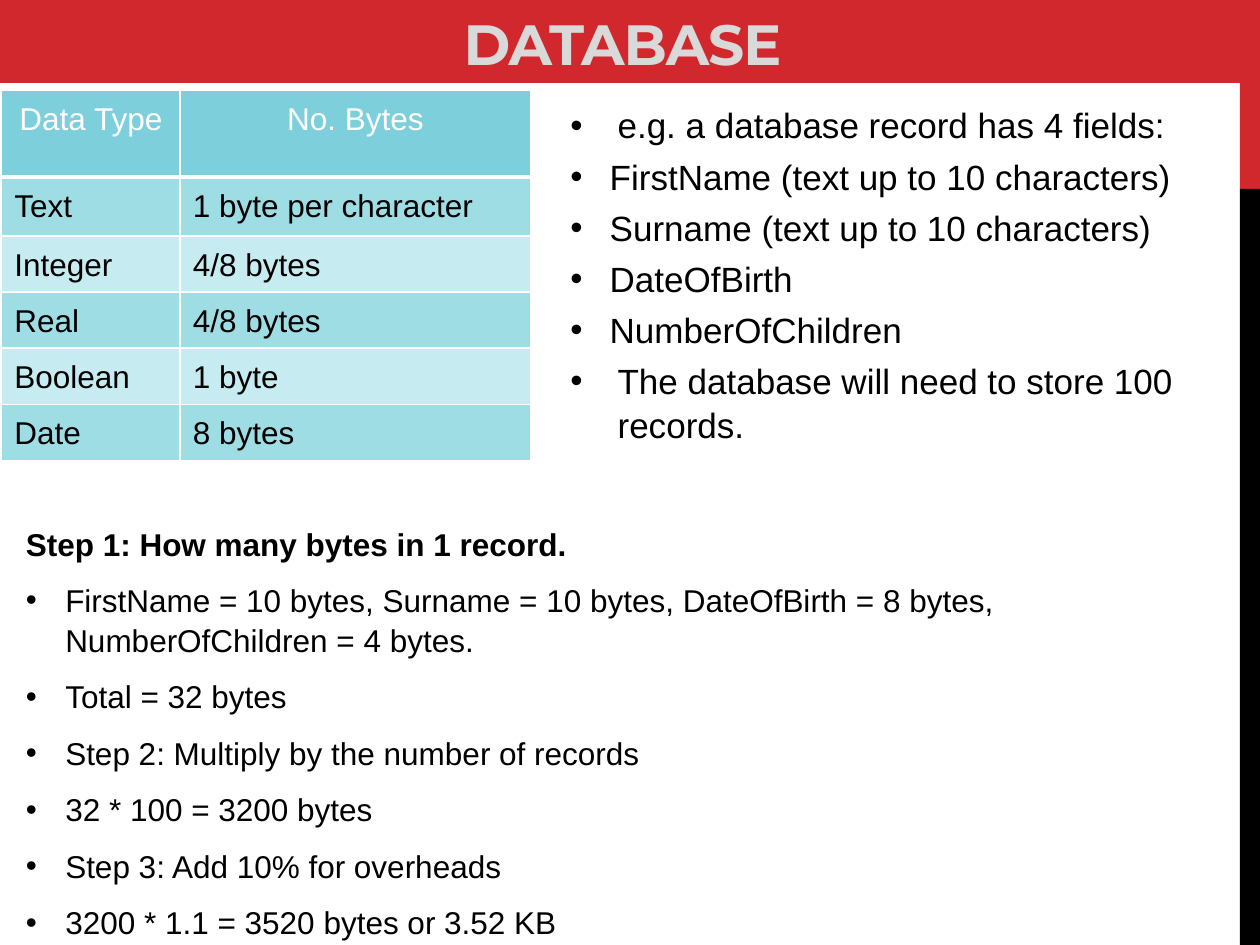
from pptx import Presentation
from pptx.dml.color import RGBColor
from pptx.enum.shapes import MSO_SHAPE
from pptx.enum.text import MSO_ANCHOR, PP_ALIGN
from pptx.oxml.ns import qn
from pptx.util import Pt
from lxml import etree

RECT = MSO_SHAPE.RECTANGLE
CENTER, LEFT = PP_ALIGN.CENTER, PP_ALIGN.LEFT
BOTTOM = MSO_ANCHOR.BOTTOM

RED = RGBColor(0xD1, 0x28, 0x2E)
BLACK = RGBColor(0x00, 0x00, 0x00)
WHITE = RGBColor(0xFF, 0xFF, 0xFF)
GREY = RGBColor(0xD9, 0xD9, 0xD9)
HEADER = RGBColor(0x7C, 0xCF, 0xDB)
BAND_DARK = RGBColor(0x9F, 0xDD, 0xE5)
BAND_LIGHT = RGBColor(0xC6, 0xEB, 0xF0)

INDENT, WIDE_INDENT = 22.5, 27


class SlideBuilder:
    font = "Arial"

    def __init__(self, slide):
        self.slide = slide

    def style(self, p, size, color=BLACK, bold=False, font=None):
        for r in p.runs:
            r.font.name = font or self.font
            r.font.size = Pt(size)
            r.font.bold = bold
            r.font.color.rgb = color

    def bar(self, x, y, w, h, color):
        sp = self.slide.shapes.add_shape(RECT, Pt(x), Pt(y), Pt(w), Pt(h))
        sp.shadow.inherit = False
        sp.fill.solid()
        sp.fill.fore_color.rgb = color
        sp.line.fill.background()
        return sp

    def title(self, x, y, w, h, text):
        tf = self.bar(x, y, w, h, RED).text_frame
        tf.vertical_anchor = BOTTOM
        tf.text = text
        p = tf.paragraphs[0]
        p.alignment = CENTER
        self.style(p, 32.4, GREY, True, "Montserrat")
        p.runs[0].font._element.set("spc", "-60")

    def bullet(self, p, indent):
        pPr = p._p.get_or_add_pPr()
        pPr.set("marL", str(Pt(indent)))
        pPr.set("indent", str(-Pt(indent)))
        etree.SubElement(pPr, qn("a:buFont"), typeface=self.font)
        etree.SubElement(pPr, qn("a:buChar"), char="•")

    def text_list(self, x, y, w, h, items, size, after=0):
        """Each item is (text, indent); an indent of 0 makes a bold heading."""
        tf = self.slide.shapes.add_textbox(Pt(x), Pt(y), Pt(w), Pt(h)).text_frame
        tf.word_wrap = True
        for i, (text, indent) in enumerate(items):
            p = tf.add_paragraph() if i else tf.paragraphs[0]
            p.text = text
            p.line_spacing = 1.05
            p.space_before = Pt(size * 0.2)
            p.space_after = Pt(after)
            self.style(p, size, bold=not indent)
            if indent:
                self.bullet(p, indent)

    def borders(self, cell, widths):
        tcPr = cell._tc.get_or_add_tcPr()
        for side, width in zip("LRTB", widths):
            ln = etree.SubElement(tcPr, qn(f"a:ln{side}"), w=str(Pt(width)))
            fill = etree.SubElement(ln, qn("a:solidFill"))
            etree.SubElement(fill, qn("a:srgbClr"), val=str(WHITE))

    def table(self, x, y, col_widths, row_heights, rows):
        tbl = self.slide.shapes.add_table(
            len(rows), len(col_widths), Pt(x), Pt(y),
            Pt(sum(col_widths)), Pt(sum(row_heights))).table
        for col, width in zip(tbl.columns, col_widths):
            col.width = Pt(width)
        for i, (values, height) in enumerate(zip(rows, row_heights)):
            tbl.rows[i].height = Pt(height)
            band = BAND_DARK if i % 2 else BAND_LIGHT
            for j, value in enumerate(values):
                cell = tbl.cell(i, j)
                self.borders(cell, (1, 1, 3 if i == 1 else 1, 1 if i else 3))
                cell.fill.solid()
                cell.fill.fore_color.rgb = band if i else HEADER
                cell.text_frame.text = value
                p = cell.text_frame.paragraphs[0]
                p.alignment = LEFT if i else CENTER
                p.line_spacing = 1.15
                self.style(p, 18, BLACK if i else WHITE)


def main():
    prs = Presentation()
    prs.slide_width, prs.slide_height = Pt(720), Pt(540)
    s = SlideBuilder(prs.slides.add_slide(prs.slide_layouts[6]))

    # Side bars and title
    s.bar(708.5, 0, 11.5, 108, RED)
    s.bar(708.5, 108, 11.5, 432, BLACK)
    s.title(0, -2.3, 711.4, 49.7, "DATABASE")

    # Worked calculation
    steps = ["FirstName = 10 bytes, Surname = 10 bytes, DateOfBirth = 8 bytes, "
             "NumberOfChildren = 4 bytes.",
             "Total = 32 bytes",
             "Step 2: Multiply by the number of records",
             "32 * 100 = 3200 bytes",
             "Step 3: Add 10% for overheads",
             "3200 * 1.1 = 3520 bytes or 3.52 KB"]
    s.text_list(7.7, 295.2, 692.6, 235.4,
                [("Step 1: How many bytes in 1 record.", 0)]
                + [(step, INDENT) for step in steps], 18, after=6)

    # Data type sizes
    s.table(1, 51.4, [102, 200.2], [49.7, 33.8] + [27.4] * 4, [
        ("Data Type", "No. Bytes"),
        ("Text", "1 byte per character"),
        ("Integer", "4/8 bytes"),
        ("Real", "4/8 bytes"),
        ("Boolean", "1 byte"),
        ("Date", "8 bytes")])

    # Example record
    s.text_list(318.8, 54.7, 387.4, 213, [
        ("e.g. a database record has 4 fields:", WIDE_INDENT),
        ("FirstName (text up to 10 characters)", INDENT),
        ("Surname (text up to 10 characters)", INDENT),
        ("DateOfBirth", INDENT),
        ("NumberOfChildren", INDENT),
        ("The database will need to store 100 records.", WIDE_INDENT)], 20)

    prs.save("out.pptx")


if __name__ == "__main__":
    main()
